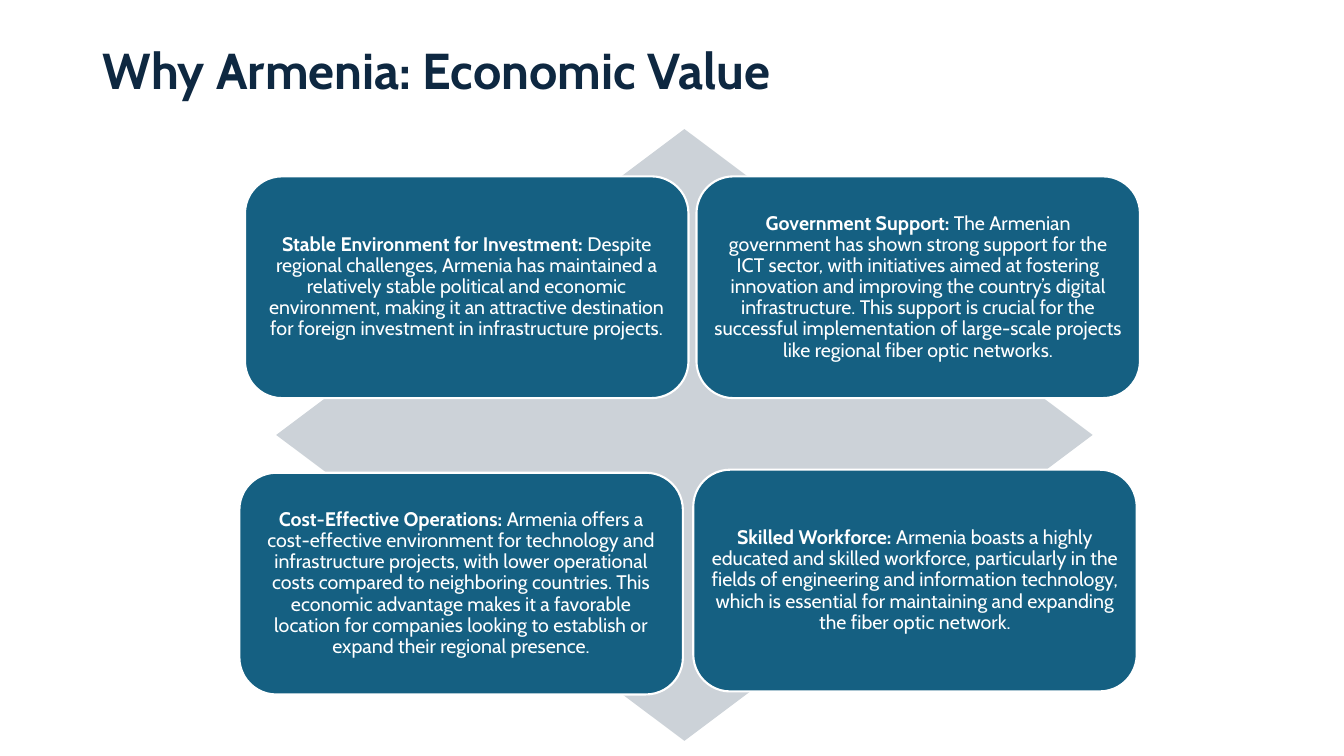
from pptx import Presentation
from pptx.dml.color import RGBColor
from pptx.enum.shapes import MSO_SHAPE as SHAPE
from pptx.enum.text import MSO_ANCHOR as ANCHOR, MSO_AUTO_SIZE as AUTO, PP_ALIGN as ALIGN
from pptx.util import Pt

FONT = "Cabin"
COLORS = {"title": "0E2841", "diamond": "CCD2D8", "card": "156082", "white": "FFFFFF"}
CARD_W, CARD_H = 316.8, 158.4

# left, top, heading, text
CARDS = [
    (175, 126, "Stable Environment for Investment:",
     "Despite regional challenges, Armenia has maintained a relatively stable "
     "political and economic environment, making it an attractive destination "
     "for foreign investment in infrastructure projects."),
    (497.5, 126, "Government Support:",
     "The Armenian government has shown strong support for the ICT sector, with "
     "initiatives aimed at fostering innovation and improving the country’s "
     "digital infrastructure. This support is crucial for the successful "
     "implementation of large-scale projects like regional fiber optic networks."),
    (171, 337.7, "Cost-Effective Operations:",
     "Armenia offers a cost-effective environment for technology and "
     "infrastructure projects, with lower operational costs compared to "
     "neighboring countries. This economic advantage makes it a favorable "
     "location for companies looking to establish or expand their regional presence."),
    (495.2, 335.5, "Skilled Workforce:",
     "Armenia boasts a highly educated and skilled workforce, particularly in "
     "the fields of engineering and information technology, which is essential "
     "for maintaining and expanding the fiber optic network."),
]


def color(name):
    return RGBColor.from_string(COLORS[name])


def format_paragraph(p, size, color_name, align):
    p.alignment = align
    p.line_spacing = 0.9
    p.font.name = FONT
    p.font.size = Pt(size)
    p.font.color.rgb = color(color_name)


def add_title(s, text):
    title = s.shapes.title
    title.left, title.top, title.width, title.height = Pt(66), Pt(0), Pt(828), Pt(104.4)
    tf = title.text_frame
    tf.text = text
    tf.auto_size = AUTO.NONE
    tf.vertical_anchor = ANCHOR.MIDDLE
    p = tf.paragraphs[0]
    format_paragraph(p, 36, "title", ALIGN.LEFT)
    p.font.bold = True


def add_filled(s, kind, left, top, width, height, fill):
    sp = s.shapes.add_shape(kind, Pt(left), Pt(top), Pt(width), Pt(height))
    sp.shadow.inherit = False
    sp.fill.solid()
    sp.fill.fore_color.rgb = color(fill)
    sp.line.fill.background()
    return sp


def add_card(s, left, top, heading, text):
    sp = add_filled(s, SHAPE.ROUNDED_RECTANGLE, left, top, CARD_W, CARD_H, "card")
    sp.line.color.rgb = color("white")
    sp.line.width = Pt(1.5)
    tf = sp.text_frame
    tf.word_wrap = True
    tf.vertical_anchor = ANCHOR.MIDDLE
    tf.margin_left = tf.margin_right = tf.margin_top = tf.margin_bottom = Pt(4.2)
    p = tf.paragraphs[0]
    format_paragraph(p, 14, "white", ALIGN.CENTER)
    r = p.add_run()
    r.text = heading + " "
    r.font.bold = True
    p.add_run().text = text


def main():
    prs = Presentation()
    prs.slide_width, prs.slide_height = Pt(960), Pt(540)
    s = prs.slides.add_slide(prs.slide_layouts[5])

    add_title(s, "Why Armenia: Economic Value")

    # Diamond behind the four cards
    add_filled(s, SHAPE.DIAMOND, 197.3, 92.2, 583.2, 437, "diamond")
    for card in CARDS:
        add_card(s, *card)

    prs.save("out.pptx")


if __name__ == "__main__":
    main()
